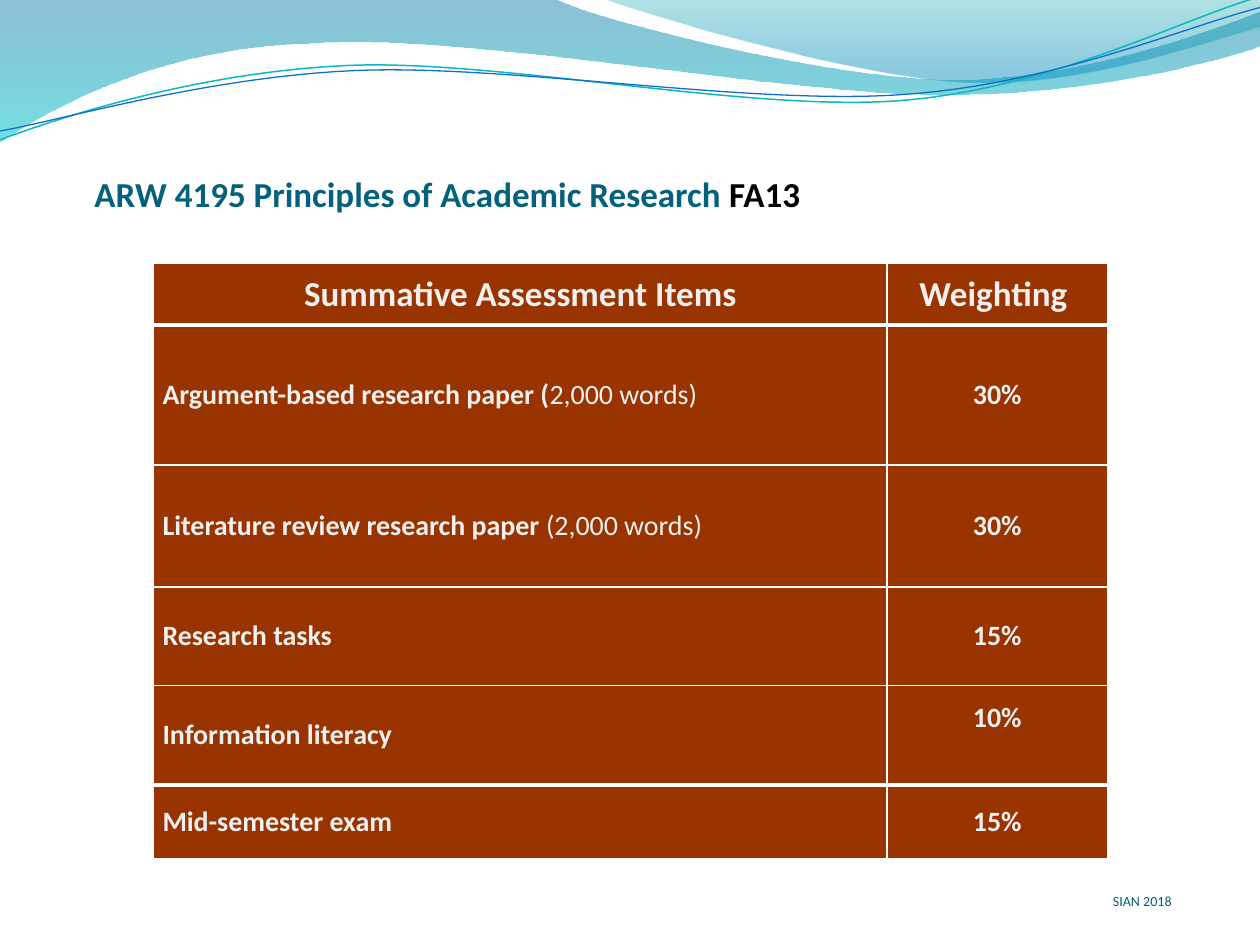
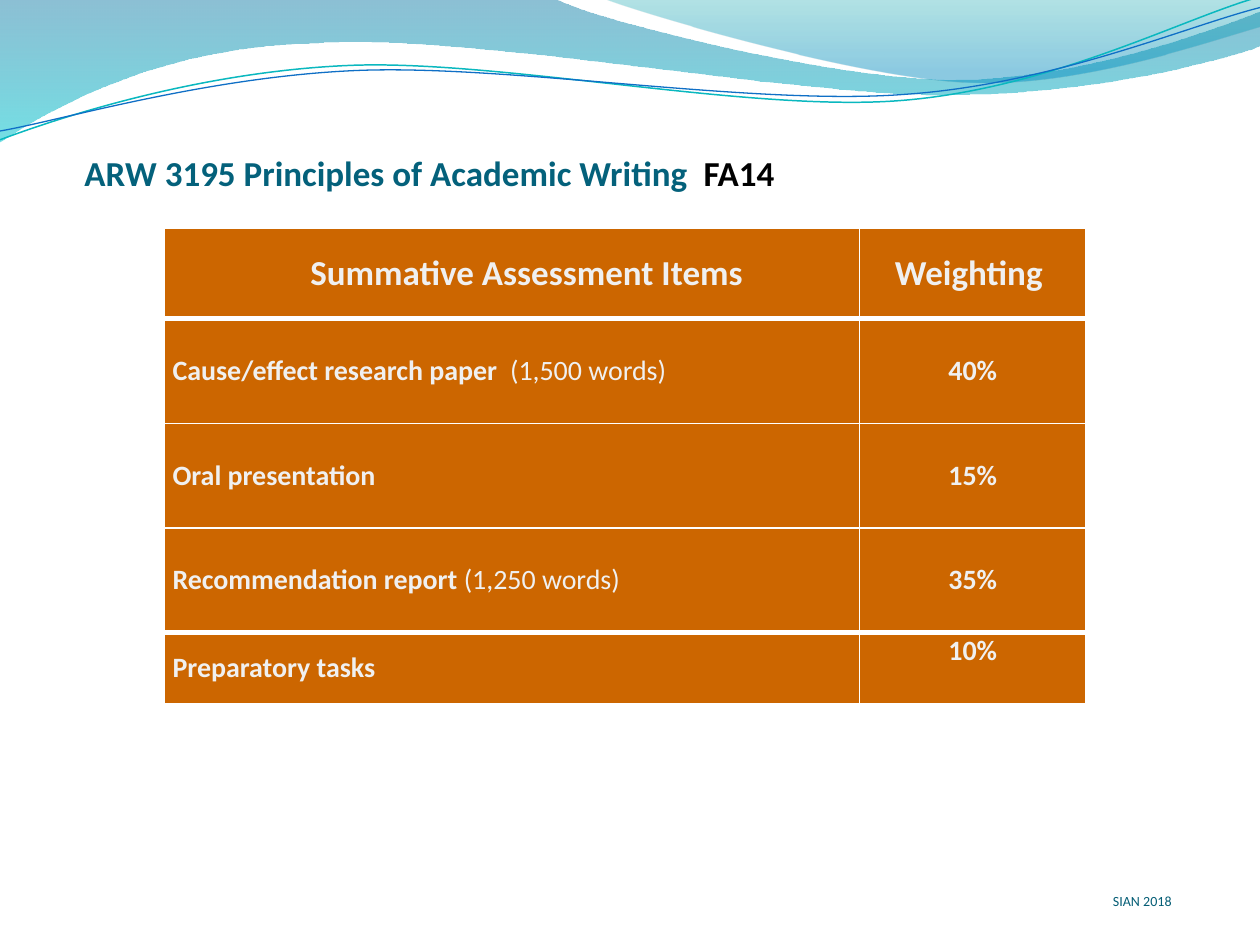
from collections import namedtuple

from lxml.etree import SubElement
from pptx import Presentation
from pptx.dml.color import RGBColor
from pptx.enum.text import MSO_ANCHOR, PP_ALIGN
from pptx.oxml.ns import qn
from pptx.util import Inches, Pt

# The page is a grid of 10 columns by 7.5 rows of square units.
COLUMNS, ROWS = 10, 7.5
UNIT = Inches(1)
FONT = "Calibri"
PAGE, TITLE, CODE, FOOTER = "FFFFFF", "04617B", "000000", "045D75"
CELL_TEXT, RULE = "F0F0F0", "FFFFFF"
CELL_MARGIN = 0.07
THIN, THICK = 1, 3

Box = namedtuple("Box", "left top width height")
BAND = Box(0, 0, COLUMNS, 1.14)
FOOTER_BOX = Box(5.63, 6.82, 3.67, 0.4)

# A two-number step is a straight line; a six-number step is a Bézier curve.
WIDE_WAVE = [
    (0, 0), (4.4, -0.01), (4.76, 0.17, 6.64, 0.63, 7.58, 0.63),
    (8.53, 0.63, 9.58, 0.26, 10, 0.09), (10.01, 0.36),
    (9.83, 0.44, 8.7, 0.76, 7.46, 0.75), (6.22, 0.75, 3.82, 0.28, 2.57, 0.34),
    (1.29, 0.36, 0.46, 0.83, -0.01, 1.13)]
CORNER_WAVE = [
    (4.79, -0.01), (5.09, 0.11, 6.82, 0.62, 7.69, 0.65),
    (8.56, 0.69, 9.61, 0.32, 10, 0.21), (10, 0)]
TEAL_LINE = [
    (0, 1.11), (0.48, 0.93, 1.58, 0.57, 2.77, 0.52),
    (3.95, 0.47, 5.93, 0.89, 7.13, 0.8), (8.33, 0.71, 9.38, 0.15, 9.98, -0.02)]
BLUE_LINE = [
    (0, 1.04), (0.47, 0.96, 1.64, 0.61, 2.83, 0.56),
    (4.03, 0.51, 5.97, 0.84, 7.17, 0.75), (8.36, 0.67, 9.41, 0.21, 10, 0.06)]
# Gradient stops: position, colour, opacity in percent.
FILLED_WAVES = [
    (WIDE_WAVE, [(0, "0074A1", 45), (1, "00C6CF", 55)]),
    (CORNER_WAVE, [(0, "00A1A9", 30), (0.8, "008BBF", 45)])]
LINE_WAVES = [(TEAL_LINE, "0AB8BF", 0.85), (BLUE_LINE, "0F6FC6", 0.75)]

HEADINGS = ("Summative Assessment Items", "Weighting ")
# Each item: bold words, plain words, weighting, row height, lift of the weighting.
COURSES = [
    dict(name="ARW 4195 Principles of Academic Research ", code="FA13",
         title_box=Box(0.75, 1.07, 9, 0.63), table_box=Box(1.22, 2.09, 7.57, 4.73),
         weight_width=1.75, heading_height=0.49, heading_indent=0, fill="993300",
         items=[("Argument-based research paper (", "2,000 words)", "30%", 1.11, 0),
                ("Literature review research paper ", "(2,000 words)", "30%", 0.97, 0),
                ("Research tasks", "", "15%", 0.78, 0),
                ("Information literacy", "", "10%", 0.79, 0.27),
                ("Mid-semester exam", "", "15%", 0.59, 0)]),
    dict(name="ARW 3195 Principles of Academic Writing  ", code="FA14",
         title_box=Box(0.67, 0.91, 9, 0.63), table_box=Box(1.3, 1.81, 7.32, 3.78),
         weight_width=1.8, heading_height=0.72, heading_indent=0.24, fill="CC6600",
         items=[("Cause/effect research paper  ", "(1,500 words)", "40%", 0.83, 0),
                ("Oral presentation", "", "15%", 0.83, 0),
                ("Recommendation report ", "(1,250 words)", "35%", 0.83, 0),
                ("Preparatory tasks", "", "10%", 0.57, 0.27)])]


def color(hex_text):
    return RGBColor.from_string(hex_text)


def grid(*lengths):
    """Turn grid units into page lengths."""
    return [round(length * UNIT) for length in lengths]


def write(frame, *pieces, size=16, align=PP_ALIGN.LEFT):
    """Write one paragraph of (text, colour, bold) pieces."""
    para = frame.paragraphs[0]
    para.alignment = align
    for text, ink, bold in pieces:
        if text:
            span = para.add_run()
            span.text = text
            span.font.name, span.font.size, span.font.bold = FONT, Pt(size), bold
            span.font.color.rgb = color(ink)


def add_text(page, box, *pieces, **style):
    frame = page.shapes.add_textbox(*grid(*box)).text_frame
    frame.word_wrap = True
    frame.vertical_anchor = MSO_ANCHOR.BOTTOM
    frame.margin_left = frame.margin_right = frame.margin_top = frame.margin_bottom = 0
    write(frame, *pieces, **style)


def bend(shape, steps):
    """Join each curve's three straight segments into one Bézier segment."""
    segments = iter(list(shape._element.iter(qn("a:lnTo"))))
    for step in steps[1:]:
        first = next(segments)
        if len(step) == 6:
            first.tag = qn("a:cubicBezTo")
            for _ in range(2):
                control = next(segments)
                first.append(control[0])
                control.getparent().remove(control)


def add_outline(page, box, steps, close):
    points = [grid(box.left + step[i], box.top + step[i + 1])
              for step in steps for i in range(0, len(step), 2)]
    builder = page.shapes.build_freeform(*points[0])
    builder.add_line_segments(points[1:], close=close)
    shape = builder.convert_to_shape()
    bend(shape, steps)
    shape.shadow.inherit = False
    return shape


def add_wave_band(page, box):
    for steps, stops in FILLED_WAVES:
        wave = add_outline(page, box, steps, close=True)
        wave.line.fill.background()
        wave.fill.gradient()
        wave.fill.gradient_angle = 270
        for stop, (position, hex_text, _) in zip(wave.fill.gradient_stops, stops):
            stop.position = position
            stop.color.rgb = color(hex_text)
        tints = wave._element.spPr.iter(qn("a:srgbClr"))
        for tint, (_, _, opacity) in zip(list(tints), stops):
            SubElement(tint, qn("a:alpha"), val=str(opacity * 1000))
    for steps, hex_text, width in LINE_WAVES:
        curve = add_outline(page, box, steps, close=False)
        curve.fill.background()
        curve.line.color.rgb = color(hex_text)
        curve.line.width = Pt(width)


def set_borders(cell, top, bottom):
    properties = cell._tc.get_or_add_tcPr()
    for side, width in (("L", THIN), ("R", THIN), ("T", top), ("B", bottom)):
        line = SubElement(properties, qn(f"a:ln{side}"), w=str(Pt(width)))
        SubElement(SubElement(line, qn("a:solidFill")), qn("a:srgbClr"), val=RULE)


def fill_cell(cell, fill, *pieces, top, bottom, indent=0, lift=0, **style):
    set_borders(cell, top, bottom)
    cell.fill.solid()
    cell.fill.fore_color.rgb = color(fill)
    cell.vertical_anchor = MSO_ANCHOR.MIDDLE
    cell.margin_left, cell.margin_right, cell.margin_top, cell.margin_bottom = grid(
        CELL_MARGIN + indent, CELL_MARGIN, 0, lift)
    write(cell.text_frame, *pieces, **style)


def add_assessment_table(page, box, course):
    items, fill = course["items"], course["fill"]
    table = page.shapes.add_table(len(items) + 1, 2, *grid(*box)).table
    table.first_row = table.horz_banding = False
    widths = grid(box.width - course["weight_width"], course["weight_width"])
    heights = grid(course["heading_height"], *(item[3] for item in items))
    for column, width in zip(table.columns, widths):
        column.width = width
    for row, height in zip(table.rows, heights):
        row.height = height

    for column, heading in enumerate(HEADINGS):
        fill_cell(table.cell(0, column), fill, (heading, CELL_TEXT, True),
                  top=THIN, bottom=THICK, size=20, align=PP_ALIGN.CENTER,
                  indent=0 if column else course["heading_indent"])
    last = len(items)
    for row, (bold, plain, weight, _, lift) in enumerate(items, 1):
        rules = dict(top=THICK if row in (1, last) else THIN,
                     bottom=THICK if row == last - 1 else THIN)
        fill_cell(table.cell(row, 0), fill, (bold, CELL_TEXT, True),
                  (plain, CELL_TEXT, False), **rules)
        fill_cell(table.cell(row, 1), fill, (weight, CELL_TEXT, True),
                  lift=lift, align=PP_ALIGN.CENTER, **rules)


def add_course_page(deck, course):
    page = deck.slides.add_slide(deck.slide_layouts[6])
    page.background.fill.solid()
    page.background.fill.fore_color.rgb = color(PAGE)
    add_wave_band(page, BAND)
    add_text(page, course["title_box"], (course["name"], TITLE, True),
             (course["code"], CODE, True), size=20)
    add_assessment_table(page, course["table_box"], course)
    add_text(page, FOOTER_BOX, ("SIAN 2018", FOOTER, False),
             size=8, align=PP_ALIGN.RIGHT)


def main():
    deck = Presentation()
    deck.slide_width, deck.slide_height = grid(COLUMNS, ROWS)
    for course in COURSES:
        add_course_page(deck, course)
    deck.save("out.pptx")


if __name__ == "__main__":
    main()
